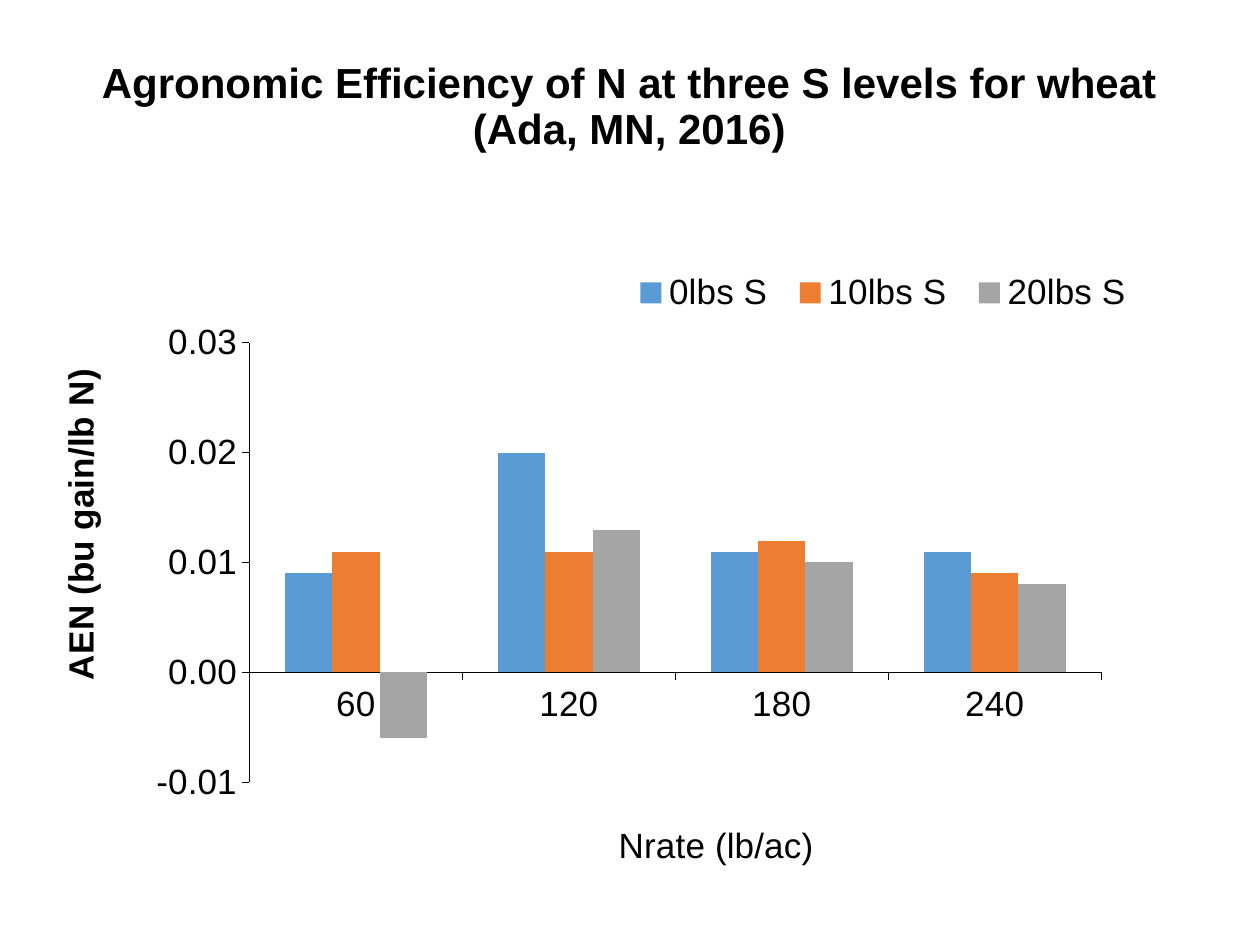
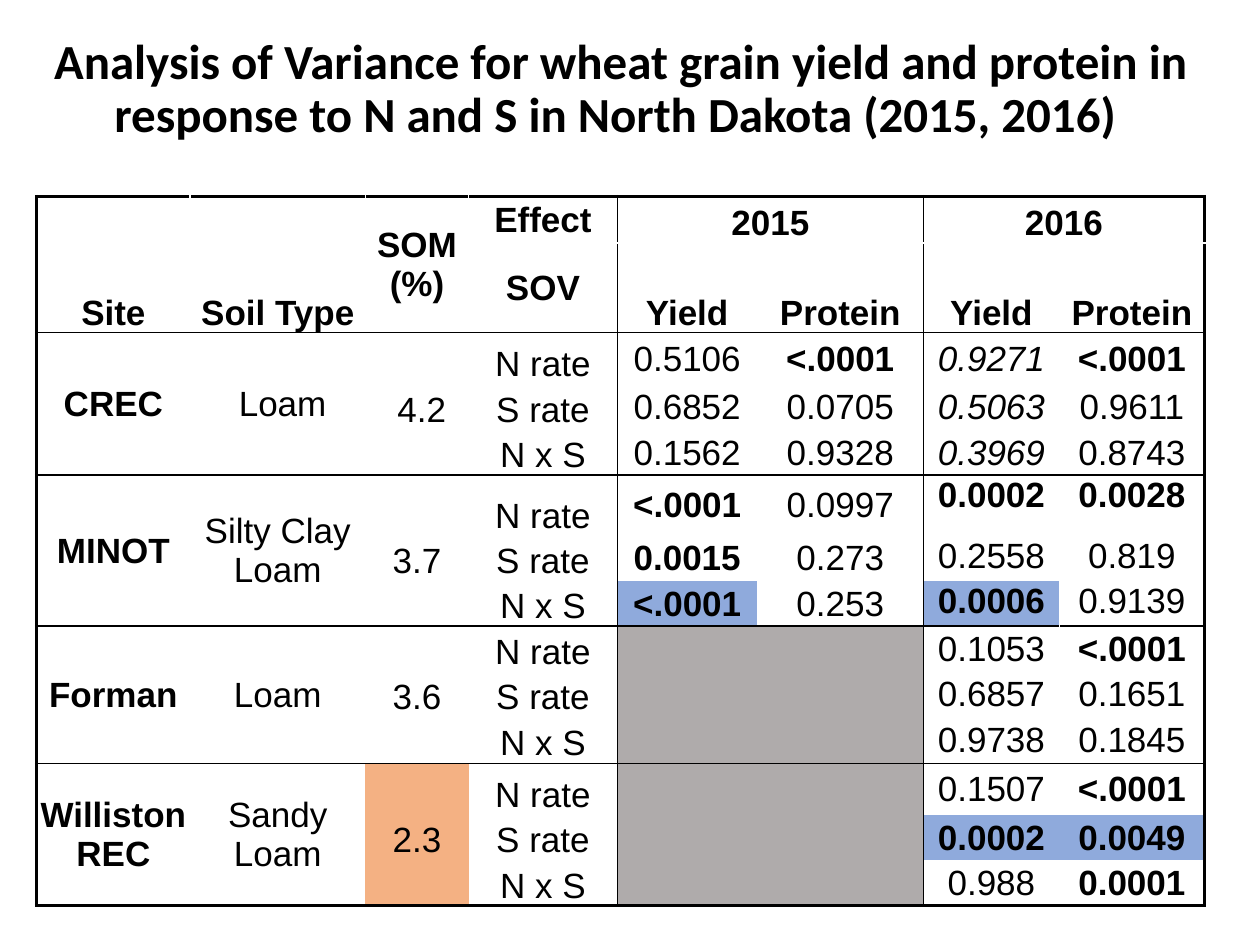
from dataclasses import dataclass
from itertools import product

from lxml.etree import SubElement
from pptx import Presentation
from pptx.chart.data import CategoryChartData
from pptx.dml.color import RGBColor
from pptx.enum.chart import XL_CHART_TYPE, XL_LEGEND_POSITION, XL_TICK_MARK
from pptx.enum.text import MSO_ANCHOR, MSO_AUTO_SIZE, PP_ALIGN
from pptx.oxml import parse_xml
from pptx.oxml.ns import nsdecls, qn
from pptx.util import Inches, Pt

BLACK, WHITE = "000000", "FFFFFF"
BLUE, GRAY, PEACH = "8FAADC", "AFABAB", "F4B183"
SERIES_COLORS = ("5B9BD5", "ED7D31", "A5A5A5")
BODY_SIZE = 20
NO_GRID_STYLE = "{2D5ABB26-0587-4C30-8999-92F81FD0307C}"
TITLE_ONLY_LAYOUT = 5


@dataclass
class TitleStyle:
    text: str
    box: tuple[float, float, float, float]
    font: str
    size: int


@dataclass
class Site:
    """A block of three rows, one for each effect; * marks bold and _ italic."""
    name: str
    soil: str
    organic_matter: str
    results: tuple[tuple[str, str, str, str], ...]


EFFICIENCY_TITLE = TitleStyle(
    "Agronomic Efficiency of N at three S levels for wheat (Ada, MN, 2016)",
    (0.41, 0.32, 9.17, 1.07), "Arial", 24)
VARIANCE_TITLE = TitleStyle(
    "Analysis of Variance for wheat grain yield and protein in response to N and S "
    "in North Dakota (2015, 2016) ",
    (0.25, 0.26, 9.35, 0.91), "Calibri", 28)

CHART_WIDTH, CHART_HEIGHT = 8.9, 5.26
N_RATES = ("60", "120", "180", "240")
EFFICIENCY = {
    "0lbs S": (0.009, 0.020, 0.011, 0.011),
    "10lbs S": (0.011, 0.011, 0.012, 0.009),
    "20lbs S": (-0.006, 0.013, 0.010, 0.008),
}

COLUMN_WIDTHS = (1.22, 1.39, 0.82, 1.18, 1.11, 1.32, 1.08, 1.15)
ROW_HEIGHT = 0.36
TALL_ROWS = {0: 0.37, 1: 0.71, 2: 0.41, 5: 0.48, 10: 0.37, 11: 0.41}
HEADER = (
    ("Site", "Soil Type", "SOM (%)", "Effect", "2015", "", "2016", ""),
    ("", "", "", "SOV", "Yield", "Protein", "Yield", "Protein"),
)
EFFECTS = ("N rate", "S rate", "N x S")
SITES = (
    Site("CREC", " Loam", " 4.2", (
        ("0.5106", "*<.0001", "_0.9271", "*<.0001"),
        ("0.6852", "0.0705", "_0.5063", "0.9611"),
        ("0.1562", "0.9328", "_0.3969", "0.8743"))),
    Site("MINOT", "Silty Clay Loam", "3.7", (
        ("*<.0001", "0.0997", "*0.0002", "*0.0028"),
        ("*0.0015", "0.273", "0.2558", "0.819"),
        ("*<.0001", "0.253", "*0.0006", "0.9139"))),
    Site("Forman", "Loam", "3.6", (
        ("", "", "0.1053", "*<.0001"),
        ("", "", "0.6857", "0.1651"),
        ("", "", "0.9738", "0.1845"))),
    Site("Williston REC", "Sandy Loam", "2.3", (
        ("", "", "0.1507", "*<.0001"),
        ("", "", "*0.0002", "*0.0049"),
        ("", "", "0.988", "*0.0001"))),
)
HEADER_ROWS = len(HEADER)
ROW_COUNT = HEADER_ROWS + len(SITES) * len(EFFECTS)
COLUMN_COUNT = len(COLUMN_WIDTHS)
MINOT_ROWS, FORMAN_ROWS = range(5, 8), range(8, 11)
FILLS = {
    **dict.fromkeys(product(range(8, 14), (4, 5)), GRAY),
    **dict.fromkeys(product(range(11, 14), (2,)), PEACH),
    **dict.fromkeys(((7, 4), (7, 6), (12, 6), (12, 7)), BLUE),
}


def rgb(color: str) -> RGBColor:
    return RGBColor.from_string(color)


def set_all(target, values: dict) -> None:
    for name, value in values.items():
        setattr(target, name, value)


def format_font(font, size: float = BODY_SIZE, name: str = "Arial",
                bold: bool = False, italic: bool = False) -> None:
    set_all(font, {"size": Pt(size), "name": name, "bold": bold, "italic": italic})
    font.color.rgb = rgb(BLACK)


def add_titled_slide(presentation, style: TitleStyle):
    slide = presentation.slides.add_slide(presentation.slide_layouts[TITLE_ONLY_LAYOUT])
    title = slide.shapes.title
    set_all(title, dict(zip(("left", "top", "width", "height"), map(Inches, style.box))))
    set_all(title.text_frame, {"text": style.text, "word_wrap": True,
                               "auto_size": MSO_AUTO_SIZE.NONE,
                               "vertical_anchor": MSO_ANCHOR.MIDDLE})
    paragraph = title.text_frame.paragraphs[0]
    set_all(paragraph, {"alignment": PP_ALIGN.CENTER, "line_spacing": 0.9})
    format_font(paragraph.runs[0].font, style.size, style.font, bold=True)
    return slide


def place_in_chart(element, index: int, box: tuple[float, ...], target: str = "") -> None:
    """Give a chart part a manual layout from inches: left, top and maybe width, height."""
    for layout in element.findall(qn("c:layout")):
        element.remove(layout)
    tags = f'<c:layoutTarget val="{target}"/>' if target else ""
    tags += '<c:xMode val="edge"/><c:yMode val="edge"/>'
    for key, length in zip("xywh", box):
        whole = CHART_WIDTH if key in "xw" else CHART_HEIGHT
        tags += f'<c:{key} val="{length / whole:.4f}"/>'
    element.insert(index, parse_xml(
        f'<c:layout {nsdecls("c")}><c:manualLayout>{tags}</c:manualLayout></c:layout>'))


def format_axis(axis, title: str, corner: tuple[float, float], bold: bool = False) -> None:
    set_all(axis, {"has_major_gridlines": False, "major_tick_mark": XL_TICK_MARK.OUTSIDE,
                   "minor_tick_mark": XL_TICK_MARK.NONE})
    axis.format.line.color.rgb = rgb(BLACK)
    axis.format.line.width = Pt(0.75)
    format_font(axis.tick_labels.font)
    axis.axis_title.text_frame.text = title
    format_font(axis.axis_title.text_frame.paragraphs[0].runs[0].font, bold=bold)
    place_in_chart(axis.axis_title._element, 1, corner)


def add_efficiency_chart(slide) -> None:
    data = CategoryChartData(number_format="0.000")
    data.categories = N_RATES
    for name, values in EFFICIENCY.items():
        data.add_series(name, values)
    chart = slide.shapes.add_chart(
        XL_CHART_TYPE.COLUMN_CLUSTERED, Inches(0.41), Inches(1.77),
        Inches(CHART_WIDTH), Inches(CHART_HEIGHT), data).chart
    set_all(chart, {"has_title": False, "has_legend": True})
    format_font(chart.font)

    plot = chart.plots[0]
    set_all(plot, {"gap_width": 150, "overlap": 0, "vary_by_categories": False})
    for series, color in zip(plot.series, SERIES_COLORS):
        series.invert_if_negative = False
        series.format.fill.solid()
        series.format.fill.fore_color.rgb = rgb(color)
    place_in_chart(chart._chartSpace.chart.plotArea, 0, (1.57, 0.95, 6.76, 3.49), "inner")

    format_axis(chart.category_axis, "Nrate (lb/ac)", (4.45, 4.71))
    value_axis = chart.value_axis
    format_axis(value_axis, "AEN (bu gain/lb N)", (0, 1.11), bold=True)
    set_all(value_axis, {"minimum_scale": -0.01, "maximum_scale": 0.03, "major_unit": 0.01})
    set_all(value_axis.tick_labels, {"number_format": "0.00",
                                     "number_format_is_linked": False})
    value_axis.axis_title.text_frame._txBody.bodyPr.set("rot", "-5400000")

    set_all(chart.legend, {"position": XL_LEGEND_POSITION.BOTTOM,
                           "include_in_layout": False})
    format_font(chart.legend.font)
    place_in_chart(chart.legend._element, 1, (4.51, 0.32, 4.18, 0.47))


def vertical_edge(row: int, edge: int) -> tuple[str, float] | None:
    """Line at the left of column number edge."""
    if edge in (0, COLUMN_COUNT):
        return BLACK, 2.25
    if edge in (4, 6):
        return BLACK, 1
    is_white = (row == 0 and edge < 4) or (row in FORMAN_ROWS and edge == 7)
    return (WHITE, 1) if is_white else None


def horizontal_edge(edge: int, column: int) -> tuple[str, float] | None:
    """Line above row number edge."""
    if edge in (0, ROW_COUNT):
        return BLACK, 2.25
    if edge == 1:
        return (WHITE, 1) if column >= 3 else None
    return (BLACK, 1) if (edge - HEADER_ROWS) % len(EFFECTS) == 0 else None


def draw_borders(cell, row: int, column: int) -> None:
    bottom = row + (cell.span_height if cell.is_merge_origin else 1)
    right = column + (cell.span_width if cell.is_merge_origin else 1)
    edges = {"L": vertical_edge(row, column), "R": vertical_edge(row, right),
             "T": horizontal_edge(row, column), "B": horizontal_edge(bottom, column)}
    properties = cell._tc.get_or_add_tcPr()
    for index, (side, edge) in enumerate(edges.items()):
        line = SubElement(properties, qn(f"a:ln{side}"))
        properties.insert(index, line)
        if edge is None:
            SubElement(line, qn("a:noFill"))
            continue
        color, width = edge
        line.set("w", str(Pt(width)))
        SubElement(SubElement(line, qn("a:solidFill")), qn("a:srgbClr")).set("val", color)


def cell_anchor(row: int, column: int) -> MSO_ANCHOR:
    if row < HEADER_ROWS:
        return MSO_ANCHOR.MIDDLE if column in (2, 3) else MSO_ANCHOR.BOTTOM
    if column in (2, 3):
        return MSO_ANCHOR.BOTTOM
    if row in MINOT_ROWS and column >= 6:
        return MSO_ANCHOR.TOP
    return MSO_ANCHOR.MIDDLE


def fill_cell(cell, row: int, column: int, text: str) -> None:
    set_all(cell, {"text": text.lstrip("*_"), "vertical_anchor": cell_anchor(row, column),
                   "margin_left": Inches(0.01), "margin_right": Inches(0.01),
                   "margin_top": Inches(0.01), "margin_bottom": 0})
    paragraph = cell.text_frame.paragraphs[0]
    paragraph.alignment = PP_ALIGN.CENTER
    bold = row < HEADER_ROWS or column == 0 or text.startswith("*")
    for run in paragraph.runs:
        format_font(run.font, bold=bold, italic=text.startswith("_"))
    if (row, column) in FILLS:
        cell.fill.solid()
        cell.fill.fore_color.rgb = rgb(FILLS[row, column])
    else:
        cell.fill.background()
    draw_borders(cell, row, column)


def table_rows() -> list[tuple[str, ...]]:
    rows = list(HEADER)
    for site in SITES:
        for index, (effect, results) in enumerate(zip(EFFECTS, site.results)):
            name, soil = (site.name, site.soil) if index == 0 else ("", "")
            organic_matter = site.organic_matter if index == 1 else ""
            rows.append((name, soil, organic_matter, effect, *results))
    return rows


def add_variance_table(slide) -> None:
    heights = [TALL_ROWS.get(row, ROW_HEIGHT) for row in range(ROW_COUNT)]
    table = slide.shapes.add_table(
        ROW_COUNT, COLUMN_COUNT, Inches(0.29), Inches(1.56),
        Inches(sum(COLUMN_WIDTHS)), Inches(sum(heights))).table
    set_all(table, {"first_row": False, "horz_banding": False})
    table._tbl.tblPr.find(qn("a:tableStyleId")).text = NO_GRID_STYLE
    for column, width in zip(table.columns, COLUMN_WIDTHS):
        column.width = Inches(width)
    for row, height in zip(table.rows, heights):
        row.height = Inches(height)

    for column in range(3):
        table.cell(0, column).merge(table.cell(1, column))
    for column in (4, 6):
        table.cell(0, column).merge(table.cell(0, column + 1))
    for row, column in product(range(HEADER_ROWS, ROW_COUNT, len(EFFECTS)), (0, 1)):
        table.cell(row, column).merge(table.cell(row + len(EFFECTS) - 1, column))

    for row, texts in enumerate(table_rows()):
        for column, text in enumerate(texts):
            fill_cell(table.cell(row, column), row, column, text)


def main() -> None:
    presentation = Presentation()
    set_all(presentation, {"slide_width": Inches(10), "slide_height": Inches(7.5)})
    add_efficiency_chart(add_titled_slide(presentation, EFFICIENCY_TITLE))
    add_variance_table(add_titled_slide(presentation, VARIANCE_TITLE))
    presentation.save("out.pptx")


if __name__ == "__main__":
    main()
